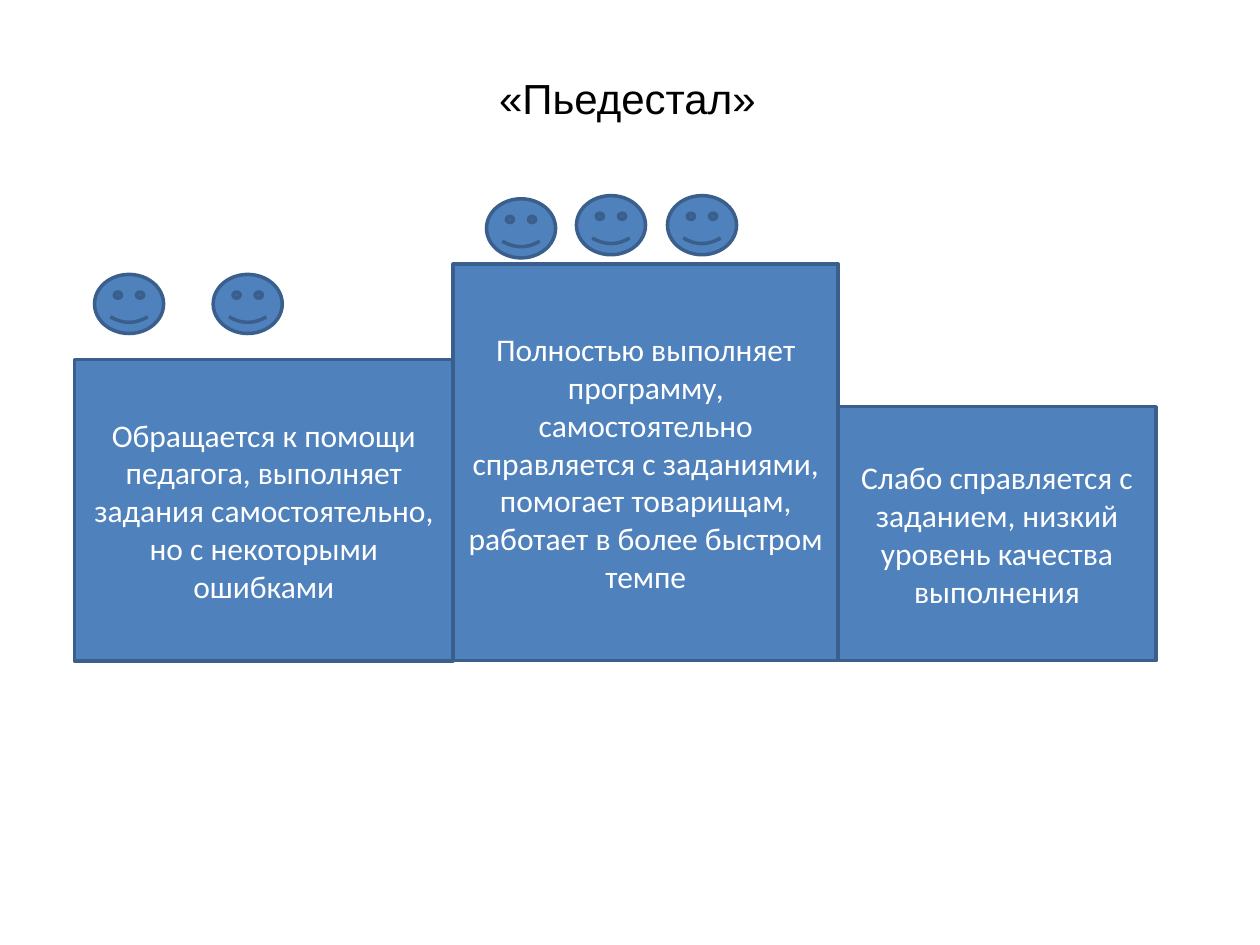
"""Builds the «Пьедестал» self-assessment slide with three podium steps and smileys."""
from pptx import Presentation
from pptx.dml.color import RGBColor
from pptx.enum import shapes, text
from pptx.util import Pt

COLOURS = {"fill": "4F81BD", "outline": "3A5F8C", "label": "FFFFFF", "title": "000000"}
PODIUM_BASE = 377.6
SMILEY_SIZE = (39.5, 33.8)
STEPS = [
    (42.6, 216.4, 205.4,
     "Обращается к помощи педагога, выполняет задания самостоятельно, "
     "но с некоторыми ошибками"),
    (259, 220, 151,
     "Полностью выполняет программу, самостоятельно справляется с заданиями, "
     "помогает товарищам, работает в более быстром темпе"),
    (479, 181.6, 232.4,
     "Слабо справляется с заданием, низкий уровень качества выполнения"),
]
SMILEYS = [(54, 156.8), (121.8, 156.8), (381.4, 111.8), (329.4, 111.8), (278, 113.6)]


def colour(role):
    return RGBColor.from_string(COLOURS[role])


def apply(target, values):
    for attribute, value in values.items():
        setattr(target, attribute, value)


def write(frame, wording, size, font, role, align):
    apply(frame, {"text": wording, "word_wrap": True})
    paragraph = frame.paragraphs[0]
    paragraph.alignment = align
    run = paragraph.runs[0]
    apply(run.font, {"size": Pt(size), "name": font, "bold": False})
    run.font.color.rgb = colour(role)


def add_title(slide, wording):
    title = slide.shapes.title
    apply(title, {"left": Pt(278), "top": Pt(37.6), "width": Pt(198.8), "height": Pt(36.6)})
    write(title.text_frame, wording, 24, "Arial", "title", text.PP_ALIGN.LEFT)
    apply(title.text_frame, {"vertical_anchor": text.MSO_ANCHOR.TOP,
                             "auto_size": text.MSO_AUTO_SIZE.SHAPE_TO_FIT_TEXT})


def add_figure(parent, preset, left, top, width, height):
    figure = parent.add_shape(preset, Pt(left), Pt(top), Pt(width), Pt(height))
    figure.shadow.inherit = False
    figure.fill.solid()
    figure.fill.fore_color.rgb = colour("fill")
    figure.line.color.rgb = colour("outline")
    figure.line.width = Pt(2)
    return figure


def add_step(podium, left, width, top, wording):
    step = add_figure(podium, shapes.MSO_SHAPE.RECTANGLE, left, top, width, PODIUM_BASE - top)
    write(step.text_frame, wording, 18, "Calibri", "label", text.PP_ALIGN.CENTER)
    step.text_frame.vertical_anchor = text.MSO_ANCHOR.MIDDLE


def add_smiley(slide, left, top):
    add_figure(slide.shapes, shapes.MSO_SHAPE.SMILEY_FACE, left, top, *SMILEY_SIZE)


def main():
    deck = Presentation()
    apply(deck, {"slide_width": Pt(720), "slide_height": Pt(540)})
    slide = deck.slides.add_slide(deck.slide_layouts[5])
    add_title(slide, "«Пьедестал»")
    podium = slide.shapes.add_group_shape().shapes
    for step in STEPS:
        add_step(podium, *step)
    for position in SMILEYS:
        add_smiley(slide, *position)
    deck.save("out.pptx")


if __name__ == "__main__":
    main()
